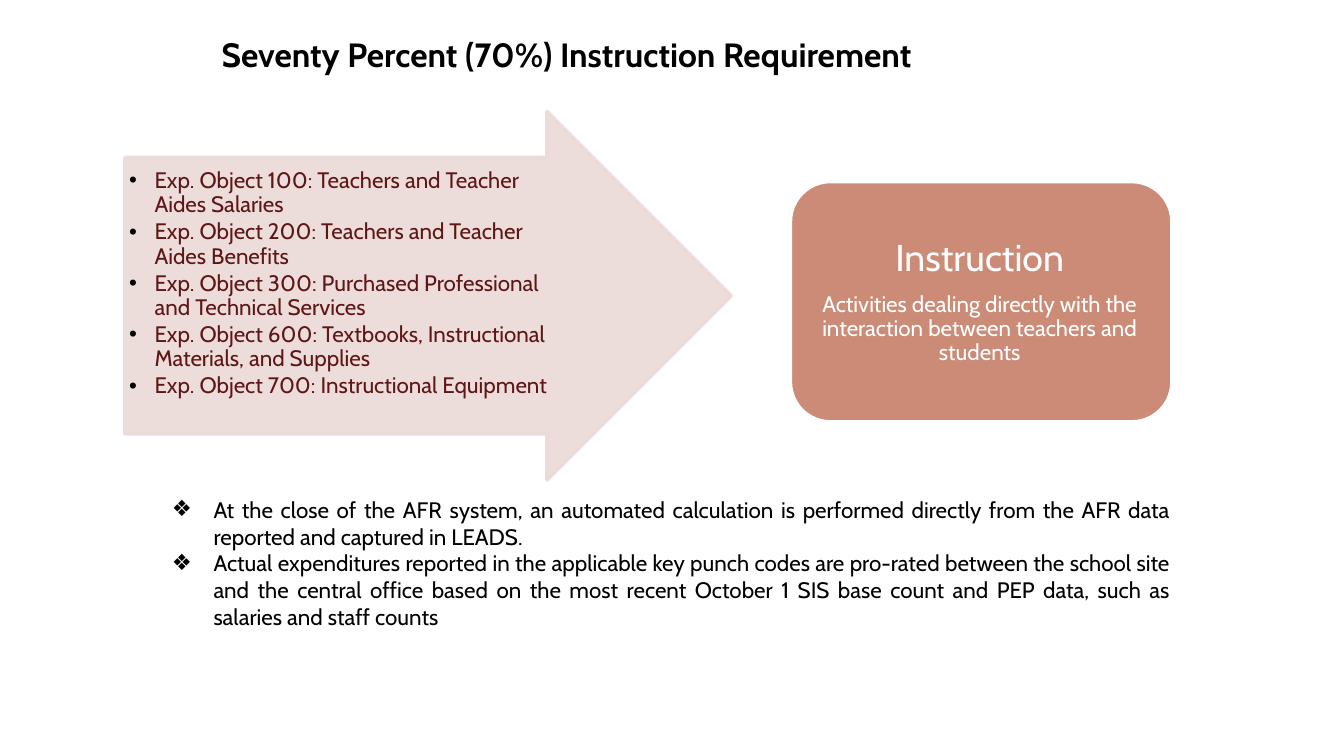
from lxml.etree import SubElement
from pptx import Presentation
from pptx.dml.color import RGBColor
from pptx.enum.shapes import MSO_SHAPE
from pptx.enum.text import MSO_ANCHOR, PP_ALIGN
from pptx.oxml.ns import qn
from pptx.util import Pt

BLACK = RGBColor(0x00, 0x00, 0x00)
WHITE = RGBColor(0xFF, 0xFF, 0xFF)
MAROON = RGBColor(0x5E, 0x16, 0x16)
BLUSH = RGBColor(0xEC, 0xDA, 0xD6)
CLAY = RGBColor(0xCB, 0x8B, 0x77)

deck = Presentation()
deck.slide_width, deck.slide_height = Pt(720), Pt(405)
page = deck.slides.add_slide(deck.slide_layouts[6])


def add_paragraph(box, text, size=12, color=BLACK, bold=False, align=PP_ALIGN.LEFT,
                  spacing=1.0, after=0, bullet=None, hang=0, first=0):
    """Write one paragraph, reusing the empty one of a new box."""
    frame = box.text_frame
    frame.word_wrap = True
    para = frame.paragraphs[0] if not frame.text else frame.add_paragraph()
    para.alignment, para.line_spacing, para.space_after = align, spacing, Pt(after)
    para.space_before = Pt(0)
    properties = para._p.get_or_add_pPr()
    properties.set("marL", str(Pt(hang)))
    properties.set("indent", str(Pt(first - hang)))
    if bullet:
        bullet_color = SubElement(properties, qn("a:buClr"))
        SubElement(bullet_color, qn("a:srgbClr"), val=str(BLACK))
        SubElement(properties, qn("a:buFont"), typeface="Arial")
        SubElement(properties, qn("a:buChar"), char=bullet)
    span = para.add_run()
    span.text = text
    span.font.name, span.font.size = "Cabin", Pt(size)
    span.font.bold, span.font.color.rgb = bold, color


def add_block(kind, left, top, width, height, fill, line):
    block = page.shapes.add_shape(kind, Pt(left), Pt(top), Pt(width), Pt(height))
    block.shadow.inherit = False
    block.fill.solid()
    block.fill.fore_color.rgb = fill
    block.line.color.rgb = line
    block.line.width = Pt(2)
    return block


# Title
title = page.shapes.add_textbox(Pt(111.6), Pt(14.4), Pt(454.3), Pt(28.8))
add_paragraph(title, "Seventy Percent (70%) Instruction Requirement", size=18, bold=True)

# Arrow, slightly transparent
arrow = add_block(MSO_SHAPE.RIGHT_ARROW, 67, 59.8, 324.7, 197.3, BLUSH, BLUSH)
arrow.adjustments[0], arrow.adjustments[1] = 0.75, 0.5
for color in arrow._element.spPr.iter(qn("a:srgbClr")):
    SubElement(color, qn("a:alpha"), val="90000")

# Expenditure objects on the arrow
objects = page.shapes.add_textbox(Pt(68.4), Pt(90), Pt(236.9), Pt(136.8))
frame = objects.text_frame
frame.margin_left = frame.margin_right = frame.margin_top = frame.margin_bottom = Pt(0.7)
for number, purpose in [
    (100, "Teachers and Teacher Aides Salaries"),
    (200, "Teachers and Teacher Aides Benefits"),
    (300, "Purchased Professional and Technical Services"),
    (600, "Textbooks, Instructional Materials, and Supplies"),
    (700, "Instructional Equipment"),
]:
    add_paragraph(objects, f"Exp. Object {number}: {purpose}", color=MAROON,
                  spacing=0.9, after=1.6, bullet="•", hang=13.7)

# Instruction card; the heading sits a little left of centre
add_block(MSO_SHAPE.ROUNDED_RECTANGLE, 423.4, 97.2, 204.5, 128.9, CLAY, WHITE)
card = page.shapes.add_textbox(Pt(429.1), Pt(103.7), Pt(191.5), Pt(116.6))
card.text_frame.vertical_anchor = MSO_ANCHOR.MIDDLE
add_paragraph(card, "Instruction", size=20, color=WHITE, align=PP_ALIGN.CENTER,
              spacing=0.9, after=7, first=-8.6)
add_paragraph(card, "Activities dealing directly with the interaction between teachers and students",
              color=WHITE, align=PP_ALIGN.CENTER, spacing=0.9, after=4.2)

# Notes on the calculation
notes = page.shapes.add_textbox(Pt(85), Pt(262.1), Pt(549.4), Pt(79.9))
for note in [
    "At the close of the AFR system, an automated calculation is performed directly "
    "from the AFR data reported and captured in LEADS.",
    "Actual expenditures reported in the applicable key punch codes are pro-rated between "
    "the school site and the central office based on the most recent October 1 SIS base "
    "count and PEP data, such as salaries and staff counts",
]:
    add_paragraph(notes, note, align=PP_ALIGN.JUSTIFY, bullet="❖", hang=22.3)

deck.save("out.pptx")
